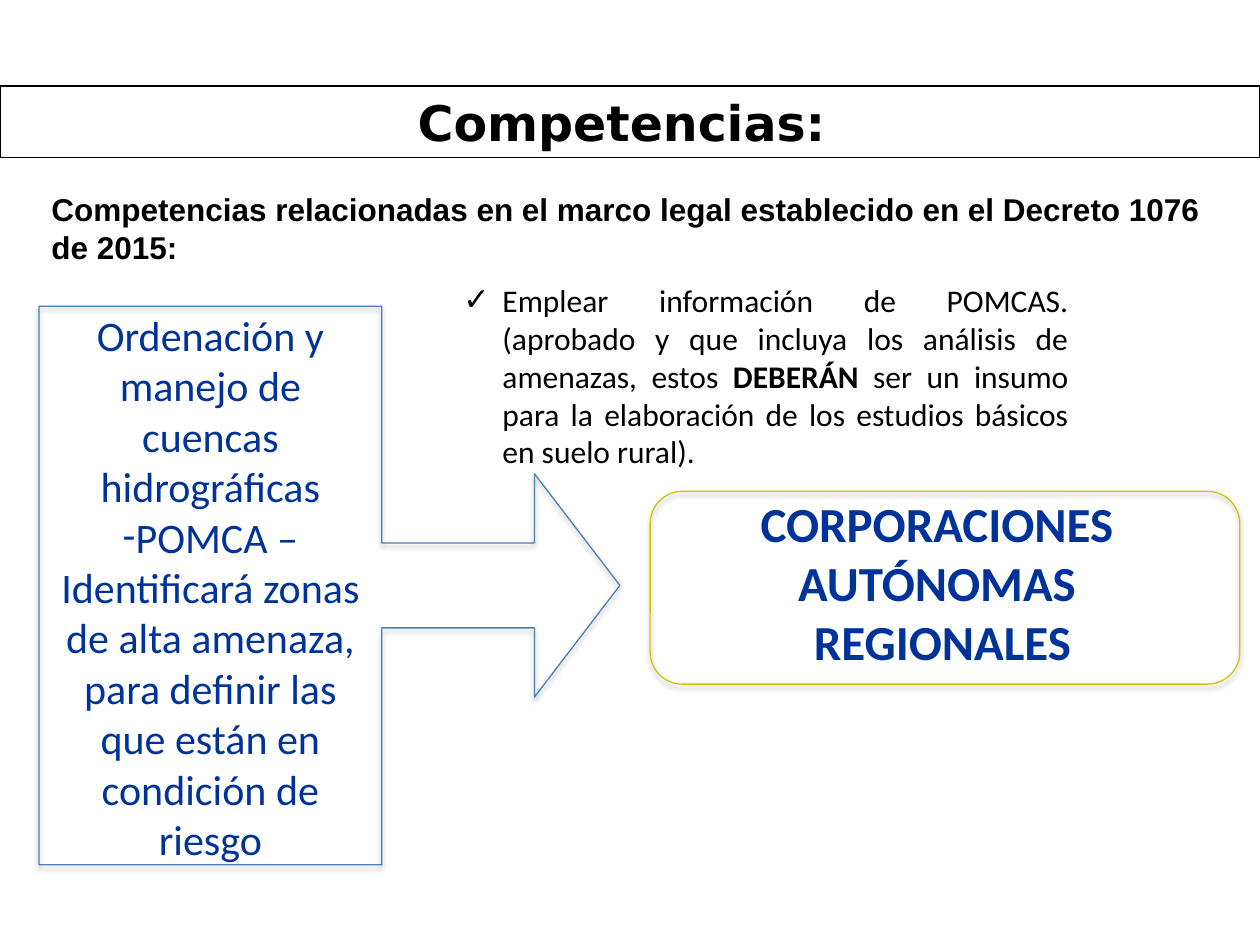
from dataclasses import dataclass
from typing import Optional

from lxml.etree import SubElement
from pptx import Presentation
from pptx.dml.color import RGBColor
from pptx.enum.shapes import MSO_SHAPE as Shape
from pptx.enum.text import MSO_ANCHOR as Anchor, MSO_AUTO_SIZE as AutoSize, PP_ALIGN as Align
from pptx.oxml import parse_xml
from pptx.oxml.ns import nsdecls, qn
from pptx.util import Inches, Pt

WIDTH, HEIGHT = 10, 7.5
COLORS = {"ink": "000000", "navy": "003399", "blue": "4B7EBC",
          "olive": "D0C600", "halo": "FEFEFE"}


@dataclass(frozen=True)
class Box:
    """Position and size as shares of the slide."""
    left: float
    top: float
    width: float
    height: float

    def emu(self) -> list:
        return [Inches(share * side) for share, side in
                zip((self.left, self.top, self.width, self.height), (WIDTH, HEIGHT) * 2)]


@dataclass(frozen=True)
class Style:
    size: int
    font: str = "Calibri"
    color: str = "ink"
    bold: bool = False
    halo: bool = False


@dataclass(frozen=True)
class Para:
    runs: tuple  # (text, bold) pairs, or plain strings in the style's weight
    align: Align = Align.LEFT
    bullet: Optional[str] = None
    indent: float = 0


def rgb(name: str) -> RGBColor:
    return RGBColor.from_string(COLORS[name])


def add_halo(run) -> None:
    run.font._element.insert(0, parse_xml(
        f'<a:ln {nsdecls("a")} w="{Pt(1.5)}"><a:solidFill>'
        f'<a:srgbClr val="{COLORS["halo"]}"/></a:solidFill></a:ln>'))


def write(frame, paras: tuple, style: Style, wrap: bool = True) -> None:
    frame.word_wrap = wrap
    frame.auto_size = AutoSize.SHAPE_TO_FIT_TEXT
    for index, para in enumerate(paras):
        line = frame.paragraphs[0] if index == 0 else frame.add_paragraph()
        line.alignment = para.align
        if para.bullet:
            props = line._p.get_or_add_pPr()
            props.set("marL", str(Inches(para.indent)))
            props.set("indent", str(-Inches(para.indent)))
            SubElement(props, qn("a:buFont"), typeface=style.font)
            SubElement(props, qn("a:buChar"), char=para.bullet)
        for part in para.runs:
            text, bold = (part, style.bold) if isinstance(part, str) else part
            run = line.add_run()
            run.text = text
            run.font.name, run.font.size, run.font.bold = style.font, Pt(style.size), bold
            run.font.color.rgb = rgb(style.color)
            if style.halo:
                add_halo(run)


def add_text(slide, box: Box, paras: tuple, style: Style, wrap: bool = True) -> None:
    write(slide.shapes.add_textbox(*box.emu()).text_frame, paras, style, wrap)


def add_outline(slide, kind: Shape, box: Box, color: str,
                adjustments: tuple = (), shadow: bool = True):
    shape = slide.shapes.add_shape(kind, *box.emu())
    for index, value in enumerate(adjustments):
        shape.adjustments[index] = value
    shape.fill.background()
    shape.line.color.rgb = rgb(color)
    shape.line.width = Pt(0.75)
    shape.shadow.inherit = False
    if shadow:
        effects = shape._element.spPr.find(qn("a:effectLst"))
        effects.append(parse_xml(
            f'<a:outerShdw {nsdecls("a")} blurRad="{Pt(3.1)}" dist="{Pt(1.8)}" '
            f'dir="5400000" rotWithShape="0"><a:srgbClr val="{COLORS["ink"]}">'
            '<a:alpha val="35000"/></a:srgbClr></a:outerShdw>'))
    return shape


def main() -> None:
    deck = Presentation()
    deck.slide_width, deck.slide_height = Inches(WIDTH), Inches(HEIGHT)
    slide = deck.slides.add_slide(deck.slide_layouts[6])

    # Legal framework
    add_text(slide, Box(0.031, 0.195, 0.959, 0.095),
             (Para(("Competencias relacionadas en el marco legal establecido "
                    "en el Decreto 1076 de 2015:",)),),
             Style(18, "Arial", bold=True))

    # Watershed planning, pointing to the authorities
    add_outline(slide, Shape.RIGHT_ARROW_CALLOUT, Box(0.031, 0.324, 0.461, 0.591),
                "blue", (0.152, 0.2, 0.153, 0.59))
    add_text(slide, Box(0.031, 0.321, 0.272, 0.605),
             (Para(("Ordenación y manejo de cuencas hidrográficas",), Align.CENTER),
              Para(("POMCA –",), Align.CENTER, bullet="-"),
              Para(("Identificará zonas de alta amenaza, para definir las que "
                    "están en condición de riesgo",), Align.CENTER)),
             Style(24, color="navy"))

    # Regional authorities
    add_outline(slide, Shape.ROUNDED_RECTANGLE, Box(0.516, 0.52, 0.468, 0.204), "olive")
    add_text(slide, Box(0.592, 0.516, 0.312, 0.201),
             tuple(Para((name,), Align.CENTER)
                   for name in ("CORPORACIONES ", "AUTÓNOMAS ", "REGIONALES")),
             Style(28, color="navy", bold=True, halo=True), wrap=False)

    # Duty to use the plans
    add_text(slide, Box(0.358, 0.291, 0.5, 0.216),
             (Para(("Emplear información de POMCAS. (aprobado y que incluya los "
                    "análisis de amenazas, estos ", ("DEBERÁN", True),
                    " ser un insumo para la elaboración de los estudios básicos "
                    "en suelo rural)."), Align.JUSTIFY, bullet="✓", indent=0.31),),
             Style(18))

    # Title band
    band = add_outline(slide, Shape.RECTANGLE, Box(0, 0.091, 1, 0.076), "ink", shadow=False)
    band.text_frame.vertical_anchor = Anchor.MIDDLE
    write(band.text_frame, (Para(("Competencias: ",), Align.CENTER),),
          Style(28, "DejaVu Sans", bold=True))

    deck.save("out.pptx")


if __name__ == "__main__":
    main()
